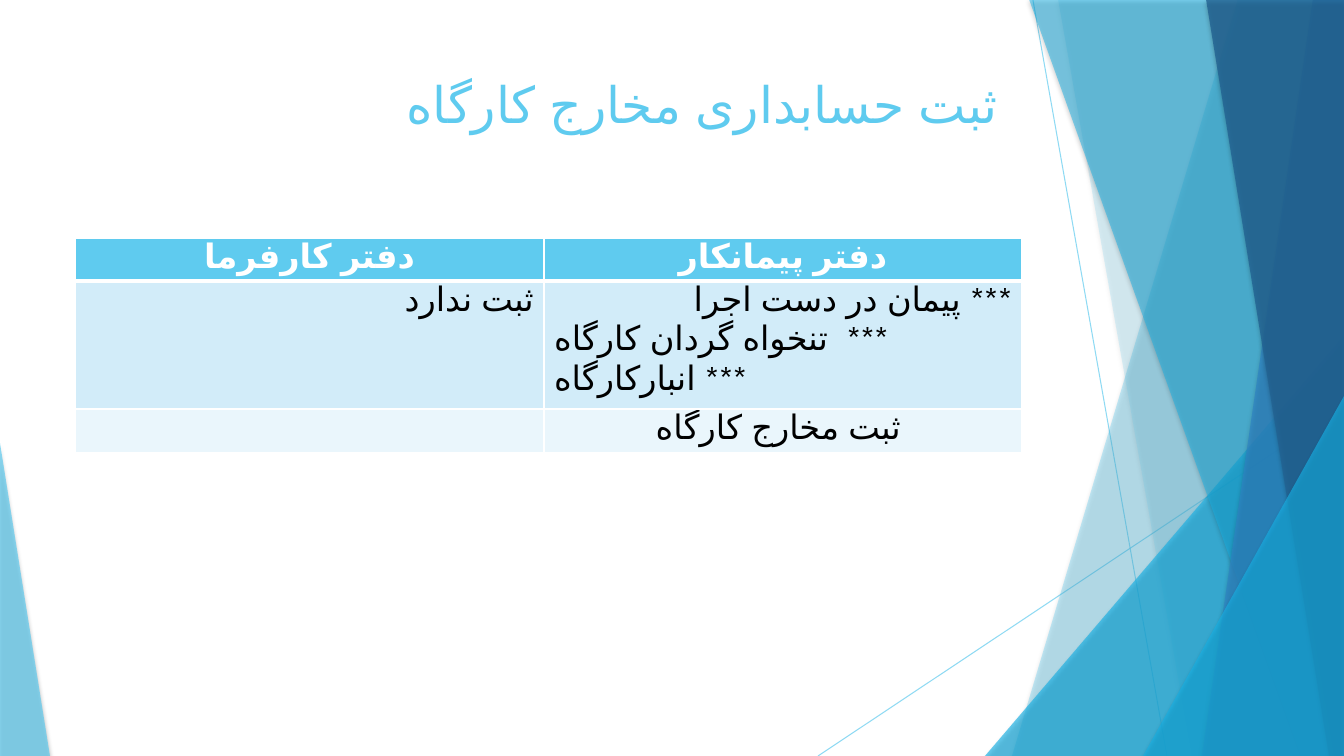
from lxml.etree import SubElement
from pptx import Presentation
from pptx.dml.color import RGBColor
from pptx.enum.shapes import MSO_CONNECTOR as Connector, MSO_SHAPE as Shape
from pptx.enum.text import MSO_ANCHOR as Anchor, PP_ALIGN as Align
from pptx.oxml.ns import qn
from pptx.util import Emu, Pt

WIDTH, HEIGHT = 1344, 756
EMU_PER_PX = 12192000 / WIDTH
FONT = "Arial"
STAR_FONT = "Karla"
LANGUAGE = "fa-IR"
COLORS = {
    "sky": "5FCBEF",
    "cyan": "17B0E4",
    "blue": "2E83C3",
    "navy": "226292",
    "row": "D2ECF9",
    "last_row": "EAF6FC",
    "white": "FFFFFF",
    "black": "000000",
}


def px(length):
    return Emu(round(length * EMU_PER_PX))


def rgb(name):
    return RGBColor.from_string(COLORS[name])


def set_alpha(fill_parent, percent):
    """Make the solid colour below fill_parent partly transparent."""
    color = next(fill_parent.iter(qn("a:srgbClr")))
    SubElement(color, qn("a:alpha"), val=str(percent * 1000))


def style_band(shape, color, alpha):
    shape.fill.solid()
    shape.fill.fore_color.rgb = rgb(color)
    set_alpha(shape.element.spPr, alpha)
    shape.line.fill.background()
    shape.shadow.inherit = False
    effects = shape.element.spPr.find(qn("a:effectLst"))
    shadow = SubElement(effects, qn("a:outerShdw"), blurRad=str(Pt(3)),
                        dist=str(Pt(2)), dir="5400000", rotWithShape="0")
    black = SubElement(shadow, qn("a:srgbClr"), val=COLORS["black"])
    SubElement(black, qn("a:alpha"), val="35000")


def add_band(slide, top_left, bottom_left, color, alpha):
    """Add a band that reaches from a slanted left edge to the slide's right side."""
    builder = slide.shapes.build_freeform(top_left, -1, scale=EMU_PER_PX)
    builder.add_line_segments([(WIDTH, -1), (WIDTH, HEIGHT), (bottom_left, HEIGHT)])
    style_band(builder.convert_to_shape(), color, alpha)


def add_corner(slide, left, top, width, apex, color, alpha):
    """Add a right-angled triangle standing on the slide's bottom edge."""
    triangle = slide.shapes.add_shape(Shape.ISOSCELES_TRIANGLE, px(left), px(top),
                                      px(width), px(HEIGHT - top))
    triangle.adjustments[0] = apex
    style_band(triangle, color, alpha)


def add_thin_line(slide, x1, y1, x2, y2):
    line = slide.shapes.add_connector(Connector.STRAIGHT, px(x1), px(y1), px(x2), px(y2))
    line.line.width = Pt(0.75)
    line.line.color.rgb = rgb("sky")
    set_alpha(line.element.spPr, 70)
    SubElement(line.element.spPr, qn("a:effectLst"))


def format_paragraph(paragraph, size, color, align, bold=False):
    paragraph.alignment = align
    font = paragraph.font
    font.name, font.size, font.bold = FONT, Pt(size), bold
    font.color.rgb = rgb(color)
    properties = paragraph._p.pPr.find(qn("a:defRPr"))
    properties.set("lang", LANGUAGE)
    SubElement(properties, qn("a:cs"), typeface=FONT)
    for run in paragraph.runs:
        run.font._element.set("lang", LANGUAGE)


def add_title(slide, text):
    title = slide.shapes.title
    title.left, title.top, title.width, title.height = px(75), px(68), px(947), px(145)
    title.text_frame.text = text
    title.text_frame.vertical_anchor = Anchor.TOP
    format_paragraph(title.text_frame.paragraphs[0], 36, "sky", Align.RIGHT)
    title.element.getparent().append(title.element)


def set_borders(cell, top, bottom):
    """Draw white cell borders, with top and bottom widths in points."""
    properties = cell._tc.get_or_add_tcPr()
    for side, width in (("L", 1), ("R", 1), ("T", top), ("B", bottom)):
        line = SubElement(properties, qn(f"a:ln{side}"), w=str(Pt(width)))
        fill = SubElement(line, qn("a:solidFill"))
        SubElement(fill, qn("a:srgbClr"), val=COLORS["white"])


def fill_cell(cell, lines, fill, color, bold, top, bottom):
    """Write (text, stars, alignment) lines into a table cell."""
    set_borders(cell, top, bottom)
    cell.fill.solid()
    cell.fill.fore_color.rgb = rgb(fill)
    cell.margin_top = cell.margin_bottom = 0
    frame = cell.text_frame
    for index, (text, stars, align) in enumerate(lines or [("", "", Align.LEFT)]):
        paragraph = frame.add_paragraph() if index else frame.paragraphs[0]
        if text:
            paragraph.add_run().text = text
        if stars:
            run = paragraph.add_run()
            run.text = stars
            run.font.name = STAR_FONT
        format_paragraph(paragraph, 24, color, align, bold)


def add_ledger_table(slide, rows):
    column_widths, row_heights = (469, 478), (43, 128, 44)
    row_styles = (("sky", "white", True, 1, 3), ("row", "black", False, 3, 1),
                  ("last_row", "black", False, 1, 1))
    table = slide.shapes.add_table(len(rows), len(column_widths), px(75), px(238),
                                   px(sum(column_widths)), px(sum(row_heights))).table
    for column, width in zip(table.columns, column_widths):
        column.width = px(width)
    for row, height, cells, style in zip(table.rows, row_heights, rows, row_styles):
        row.height = px(height)
        for cell, lines in zip(row.cells, cells):
            fill_cell(cell, lines, *style)


def add_background(slide):
    add_thin_line(slide, 1033, 0, 1167, HEIGHT)
    add_thin_line(slide, WIDTH, 406, 818, HEIGHT)
    add_band(slide, 1238, 1012, "sky", 36)
    add_band(slide, 1058, 1192, "sky", 20)
    add_corner(slide, 985, 336, 359, 1, "cyan", 66)
    add_band(slide, 1029, 1301, "cyan", 50)
    add_band(slide, 1313, 1202, "blue", 70)
    add_band(slide, 1206, 1329, "navy", 80)
    add_corner(slide, 1143, 396, 201, 1, "cyan", 66)
    add_corner(slide, 0, 443, 50, 0, "sky", 70)


def main():
    presentation = Presentation()
    presentation.slide_width, presentation.slide_height = px(WIDTH), px(HEIGHT)
    slide = presentation.slides.add_slide(presentation.slide_layouts[5])
    add_background(slide)
    add_title(slide, "ثبت حسابداری مخارج کارگاه ")
    add_ledger_table(slide, [
        [[("دفتر کارفرما", "", Align.CENTER)],
         [("دفتر پیمانکار", "", Align.CENTER)]],
        [[("ثبت ندارد", "", Align.RIGHT)],
         [("پیمان در دست اجرا", " ***", Align.RIGHT),
          ("تنخواه گردان کارگاه", "  ***", Align.LEFT),
          ("انبارکارگاه", " ***", Align.LEFT)]],
        [[],
         [("ثبت مخارج کارگاه ", "", Align.CENTER)]],
    ])
    presentation.save("out.pptx")


if __name__ == "__main__":
    main()
